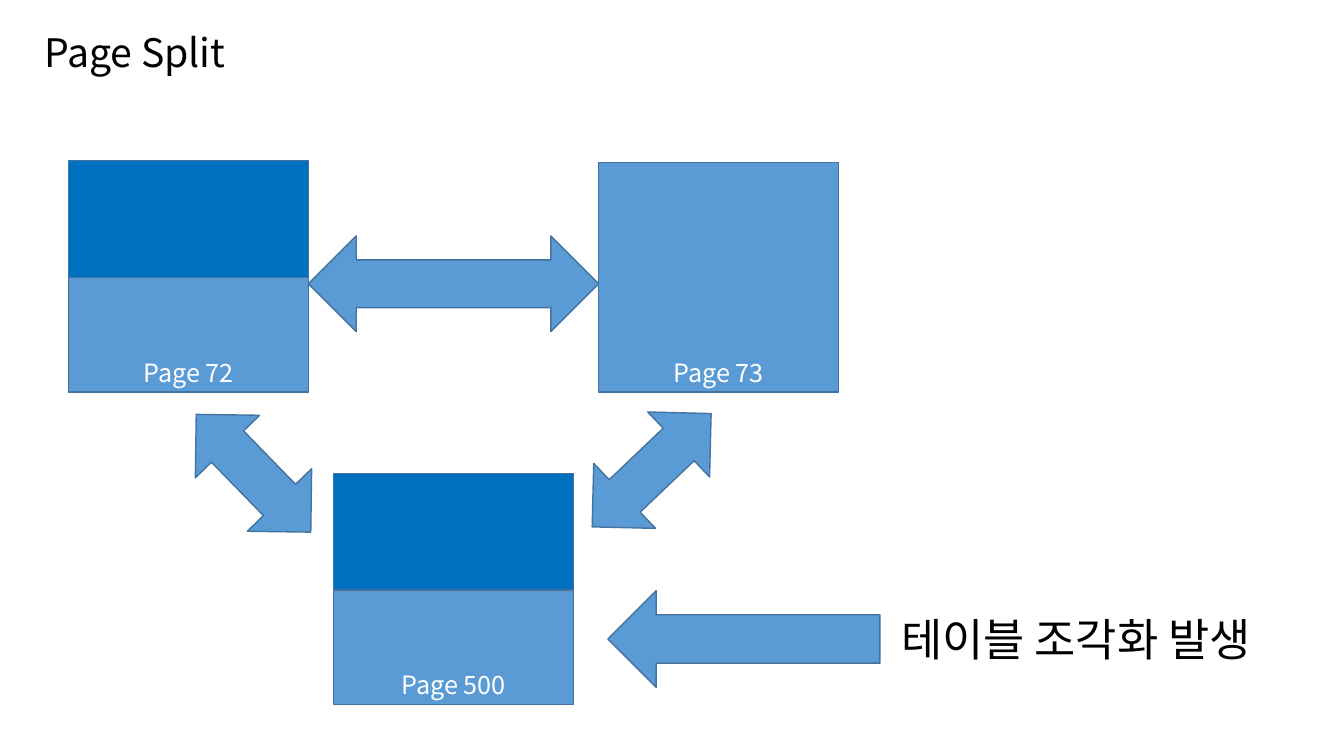
from dataclasses import dataclass

import lxml.etree
import pptx
import pptx.dml.color
import pptx.enum.shapes
import pptx.enum.text
import pptx.oxml.ns
import pptx.util

SHAPES = pptx.enum.shapes.MSO_SHAPE
ALIGN = pptx.enum.text.PP_ALIGN
ANCHOR = pptx.enum.text.MSO_ANCHOR
FIT = pptx.enum.text.MSO_AUTO_SIZE

FONT = "Noto Sans CJK KR"
LIGHT_BLUE, DARK_BLUE, OUTLINE = "5B9BD5", "0070C0", "43739E"
BLACK, WHITE = "000000", "FFFFFF"

# The slide is a grid of 40 columns and 30 rows
WIDTH, HEIGHT = pptx.util.Inches(13.33), pptx.util.Inches(7.5)
COLUMN, ROW = WIDTH / 40, HEIGHT / 30


@dataclass
class Area:
    col: float
    row: float
    cols: float
    rows: float

    def emu(self) -> tuple[int, int, int, int]:
        return (round(self.col * COLUMN), round(self.row * ROW),
                round(self.cols * COLUMN), round(self.rows * ROW))


@dataclass
class Page:
    name: str
    step: float  # horizontal position, in page pitches
    row: float
    split: bool


@dataclass
class Arrow:
    kind: SHAPES
    area: Area
    rotation: float = 0


# Pages and the arrows between them
PAGE_LEFT, PAGE_PITCH, PAGE_COLS, PAGE_ROWS = 2.04, 15.78, 7.14, 9.12
NEW_ROWS, NEW_RISE = 4.64, 0.06
PAGES = [
    Page("Page 72", 0, 6.44, True),
    Page("Page 73", 1, 6.44, False),
    Page("Page 500", 0.5, 18.84, True),
]
ARROWS = [
    Arrow(SHAPES.LEFT_RIGHT_ARROW,
          Area(PAGE_LEFT + PAGE_COLS, 9.36, PAGE_PITCH - PAGE_COLS, 3.8)),
    Arrow(SHAPES.LEFT_RIGHT_ARROW, Area(5.1, 17, 4.89, 3.56), 45.8),
    Arrow(SHAPES.LEFT_RIGHT_ARROW, Area(16.95, 16.88, 4.89, 3.56), 136.4),
    Arrow(SHAPES.LEFT_ARROW, Area(18.09, 23.44, 8.1, 3.84)),
]


def rgb(color: str) -> pptx.dml.color.RGBColor:
    return pptx.dml.color.RGBColor.from_string(color)


def write(tf, text: str, size: float, color: str, align=ALIGN.LEFT) -> None:
    p = tf.paragraphs[0]
    p.text = text
    p.alignment = align
    p.font.size = pptx.util.Pt(size)
    p.font.color.rgb = rgb(color)
    p.font.name = FONT
    # Korean glyphs use the East Asian font slot
    qn = pptx.oxml.ns.qn
    defaults = p._p.pPr.find(qn("a:defRPr"))
    lxml.etree.SubElement(defaults, qn("a:ea")).set("typeface", FONT)


def add_block(slide, kind: SHAPES, area: Area, fill: str = LIGHT_BLUE):
    sp = slide.shapes.add_shape(kind, *area.emu())
    sp.shadow.inherit = False
    sp.fill.solid()
    sp.fill.fore_color.rgb = rgb(fill)
    sp.line.color.rgb = rgb(OUTLINE)
    sp.line.width = pptx.util.Pt(1)
    return sp


def add_page(slide, page: Page) -> None:
    col = PAGE_LEFT + page.step * PAGE_PITCH
    sp = add_block(slide, SHAPES.RECTANGLE,
                   Area(col, page.row, PAGE_COLS, PAGE_ROWS))
    sp.text_frame.vertical_anchor = ANCHOR.BOTTOM
    write(sp.text_frame, page.name, 18, WHITE, ALIGN.CENTER)
    if page.split:
        add_block(slide, SHAPES.RECTANGLE,
                  Area(col, page.row - NEW_RISE, PAGE_COLS, NEW_ROWS), DARK_BLUE)


def add_arrow(slide, arrow: Arrow) -> None:
    add_block(slide, arrow.kind, arrow.area).rotation = arrow.rotation


def add_title(slide, text: str, area: Area) -> None:
    title = slide.shapes.title
    title.left, title.top, title.width, title.height = area.emu()
    tf = title.text_frame
    tf.auto_size = FIT.NONE
    tf.vertical_anchor = ANCHOR.MIDDLE
    write(tf, text, 28, BLACK)
    tf.paragraphs[0].line_spacing = 0.9


def add_caption(slide, text: str, area: Area) -> None:
    tf = slide.shapes.add_textbox(*area.emu()).text_frame
    tf.word_wrap = True
    tf.auto_size = FIT.SHAPE_TO_FIT_TEXT
    write(tf, text, 32, BLACK)


def main() -> None:
    prs = pptx.Presentation()
    prs.slide_width, prs.slide_height = WIDTH, HEIGHT
    slide = prs.slides.add_slide(prs.slide_layouts.get_by_name("Title Only"))

    add_title(slide, "Page Split", Area(1.02, 1, 36, 2.36))
    for page in PAGES:
        add_page(slide, page)
    for arrow in ARROWS:
        add_arrow(slide, arrow)
    add_caption(slide, "테이블 조각화 발생", Area(26.52, 24.08, 12.54, 2.56))

    prs.save("out.pptx")


if __name__ == "__main__":
    main()
